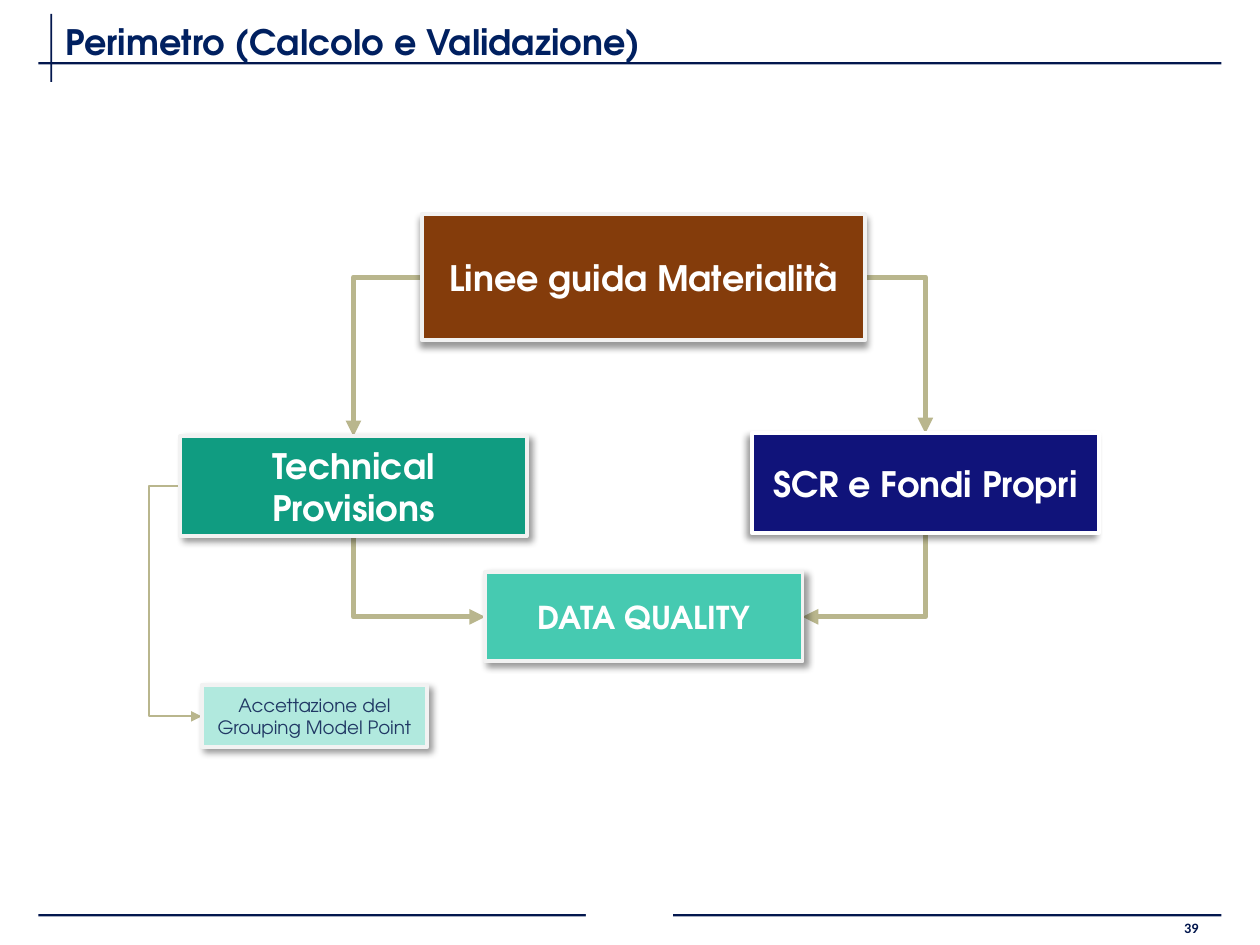
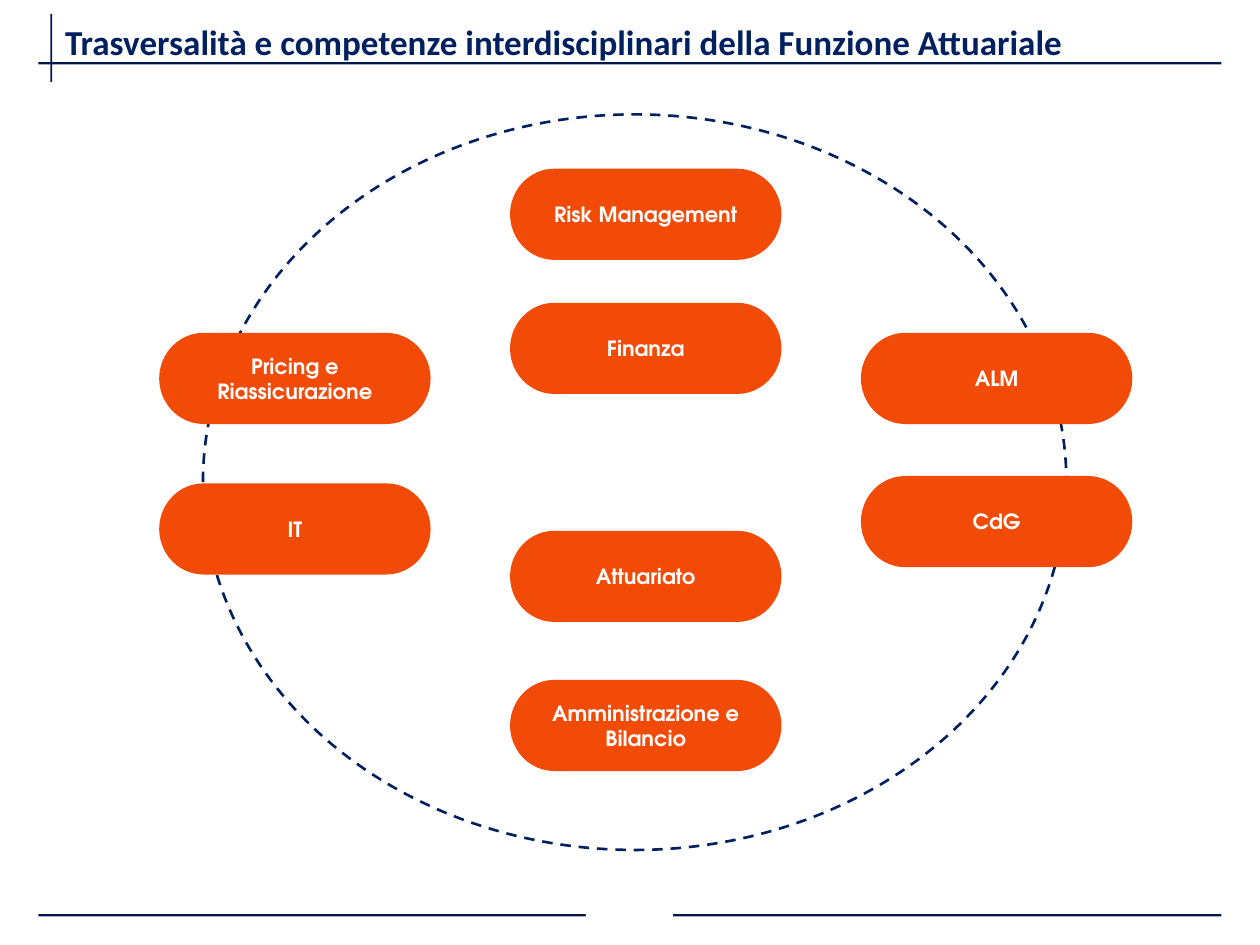
"""Build two slides on the actuarial function: calculation perimeter and related skills."""
from collections import namedtuple

from lxml import etree
from pptx import Presentation
from pptx.dml.color import RGBColor
from pptx.enum.dml import MSO_LINE
from pptx.enum.shapes import MSO_CONNECTOR, MSO_SHAPE
from pptx.enum.text import MSO_ANCHOR, PP_ALIGN
from pptx.oxml.ns import qn
from pptx.util import Pt

RECTANGLE = MSO_SHAPE.RECTANGLE
CIRCLE = MSO_SHAPE.FLOWCHART_CONNECTOR
PILL = MSO_SHAPE.FLOWCHART_TERMINATOR
ELBOW = MSO_CONNECTOR.ELBOW
DASH = MSO_LINE.DASH
LEFT, CENTER = PP_ALIGN.LEFT, PP_ALIGN.CENTER
TOP, MIDDLE = MSO_ANCHOR.TOP, MSO_ANCHOR.MIDDLE

ADVENTOR = "TeX Gyre Adventor"
CALIBRI = "Calibri"
COLORS = {
    "rule": "03174E",
    "title": "002060",
    "white": "FFFFFF",
    "edge": "F2F2F2",
    "arrow": "B9B68D",
    "materiality": "843C0B",
    "provisions": "109C81",
    "scr": "10137A",
    "quality": "46CAB1",
    "grouping": "B1E9DE",
    "grouping_text": "203864",
    "skill": "F24B08",
    "shadow": "000000",
}


class Box(namedtuple("Box", "left top width height")):
    """A rectangle in points with the middles of its sides."""

    @property
    def center_x(self):
        """Return the horizontal middle."""
        return self.left + self.width / 2

    @property
    def center_y(self):
        """Return the vertical middle."""
        return self.top + self.height / 2

    @property
    def west(self):
        """Return the middle of the left side."""
        return self.left, self.center_y

    @property
    def east(self):
        """Return the middle of the right side."""
        return self.left + self.width, self.center_y

    @property
    def north(self):
        """Return the middle of the top side."""
        return self.center_x, self.top

    @property
    def south(self):
        """Return the middle of the bottom side."""
        return self.center_x, self.top + self.height


def rgb(name):
    """Look up a colour by its name."""
    return RGBColor.from_string(COLORS[name])


def write_text(frame, text, size=20, font=ADVENTOR, color="white", bold=True,
               align=CENTER, anchor=MIDDLE, spacing=None):
    """Fill a text frame, one paragraph for each line of text."""
    frame.word_wrap = True
    frame.vertical_anchor = anchor
    for index, line in enumerate(text.split("\n")):
        paragraph = frame.add_paragraph() if index else frame.paragraphs[0]
        paragraph.alignment = align
        if spacing:
            paragraph.line_spacing = spacing
        run = paragraph.add_run()
        run.text = line
        run.font.size = Pt(size)
        run.font.name = font
        run.font.bold = bold
        run.font.color.rgb = rgb(color)


def add_label(slide, box, text, **text_format):
    """Add a plain text box."""
    label = slide.shapes.add_textbox(*map(Pt, box))
    write_text(label.text_frame, text, align=LEFT, anchor=TOP, **text_format)


def add_figure(slide, kind, box, fill=None, edge=None, edge_width=1):
    """Add a preset shape with an optional fill and edge."""
    figure = slide.shapes.add_shape(kind, *map(Pt, box))
    figure.shadow.inherit = False
    if fill:
        figure.fill.solid()
        figure.fill.fore_color.rgb = rgb(fill)
    else:
        figure.fill.background()
    if edge:
        figure.line.color.rgb = rgb(edge)
        figure.line.width = Pt(edge_width)
    else:
        figure.line.fill.background()
    return figure


def cast_shadow(figure, angle):
    """Give a shape a soft shadow towards an angle in degrees."""
    effects = figure._element.spPr.find(qn("a:effectLst"))
    shadow = etree.SubElement(
        effects, qn("a:outerShdw"), blurRad=str(Pt(4)), dist=str(Pt(3)),
        dir=str(angle * 60000), algn="ctr", rotWithShape="0")
    tint = etree.SubElement(shadow, qn("a:srgbClr"), val=COLORS["shadow"])
    etree.SubElement(tint, qn("a:alpha"), val="40000")


def add_step(slide, box, text, fill, angle=45, edge="edge", **text_format):
    """Add a shadowed box of the flow."""
    step = add_figure(slide, RECTANGLE, box, fill, edge, 2.25)
    cast_shadow(step, angle)
    write_text(step.text_frame, text, **text_format)


def add_elbow(slide, start, end, width=3):
    """Add a bent arrow between two points."""
    arrow = slide.shapes.add_connector(ELBOW, *map(Pt, (*start, *end)))
    arrow.line.color.rgb = rgb("arrow")
    arrow.line.width = Pt(width)
    properties = arrow._element.spPr
    etree.SubElement(arrow.line._get_or_add_ln(), qn("a:tailEnd"), type="triangle")
    etree.SubElement(properties, qn("a:effectLst"))
    return properties


def add_corner_across(slide, start, end):
    """Add an arrow that runs sideways, then down."""
    add_elbow(slide, start, end).prstGeom.set("prst", "bentConnector2")


def add_corner_down(slide, start, end):
    """Add an arrow that runs down, then sideways, as a turned corner."""
    (x1, y1), (x2, y2) = start, end
    center_x, center_y = (x1 + x2) / 2, (y1 + y2) / 2
    half_run, half_drop = abs(x2 - x1) / 2, (y2 - y1) / 2
    side = 1 if x2 > x1 else -1
    properties = add_elbow(
        slide,
        (center_x + side * half_drop, center_y - half_run),
        (center_x - side * half_drop, center_y + half_run))
    properties.prstGeom.set("prst", "bentConnector2")
    properties.xfrm.set("rot", str((270 if side > 0 else 90) * 60000))


def add_detour(slide, start, end, bend_x):
    """Add a thin arrow that goes round by a vertical run at bend_x."""
    geometry = add_elbow(slide, start, end, width=1).prstGeom
    ratio = (bend_x - start[0]) / (end[0] - start[0])
    guides = geometry.get_or_add_avLst()
    etree.SubElement(guides, qn("a:gd"), name="adj1",
                     fmla=f"val {round(ratio * 100000)}")


def add_framed_slide(deck, title, font):
    """Add a blank slide with the shared rules and title."""
    slide = deck.slides.add_slide(deck.slide_layouts[6])
    for box, fill in (
        (Box(22, 522.3, 676, 1.4), "rule"),
        (Box(334.8, 510.5, 49.7, 24.5), "white"),
        (Box(28.8, 7.9, 1, 38.9), "rule"),
        (Box(22, 35.5, 676, 1.4), "rule"),
    ):
        add_figure(slide, RECTANGLE, box, fill)
    add_label(slide, Box(30.2, 11, 634, 24), title, font=font, color="title", spacing=0.9)
    return slide


def build_perimeter(deck):
    """Build the flow from the materiality guidelines to data quality."""
    slide = add_framed_slide(deck, "Perimetro (Calcolo e Validazione)", ADVENTOR)
    add_label(slide, Box(669.6, 522, 28.8, 17.3), "39", size=8.2, font=CALIBRI, color="rule")

    materiality = Box(241, 122.4, 253.4, 72)
    provisions = Box(103, 249.3, 198, 57)
    scr = Box(429.8, 247.7, 198, 57)
    quality = Box(277.2, 327, 181.4, 51)
    grouping = Box(115.2, 391.7, 129, 35.3)

    add_corner_across(slide, materiality.west, provisions.north)
    add_corner_down(slide, provisions.south, quality.west)
    add_corner_across(slide, materiality.east, scr.north)
    add_corner_down(slide, scr.south, quality.east)
    add_detour(slide, provisions.west, grouping.west, bend_x=85)

    add_step(slide, materiality, "Linee guida Materialità", "materiality", angle=90)
    add_step(slide, quality, "DATA QUALITY", "quality", size=18)
    add_step(slide, provisions, "Technical Provisions", "provisions")
    add_step(slide, scr, "SCR e Fondi Propri", "scr", angle=135, edge="white")
    add_step(slide, grouping, "Accettazione del Grouping Model Point", "grouping",
             size=10.5, color="grouping_text", bold=False)


def build_skills(deck):
    """Build the ring of skills around the actuarial function."""
    slide = add_framed_slide(
        deck, "Trasversalità e competenze interdisciplinari della Funzione Attuariale", CALIBRI)
    ring = add_figure(slide, CIRCLE, Box(116, 65.4, 493.4, 420.3), edge="title", edge_width=1.5)
    ring.line.dash_style = DASH

    columns = (
        (("Pricing e\nRiassicurazione", 190.7), ("IT", 276.7)),
        (("Risk Management", 96.9), ("Finanza", 173.5),
         ("Attuariato", 303.8), ("Amministrazione e Bilancio", 389)),
        (("ALM", 190.7), ("CdG", 272.5)),
    )
    for column, skills in enumerate(columns):
        for name, top in skills:
            box = Box(91.5 + column * 200.5, top, 154.1, 51.1)
            skill = add_figure(slide, PILL, box, "skill", "skill")
            write_text(skill.text_frame, name, size=12)


def main():
    """Build and save the deck."""
    deck = Presentation()
    deck.slide_width, deck.slide_height = Pt(720), Pt(540)
    build_perimeter(deck)
    build_skills(deck)
    deck.save("out.pptx")


if __name__ == "__main__":
    main()
